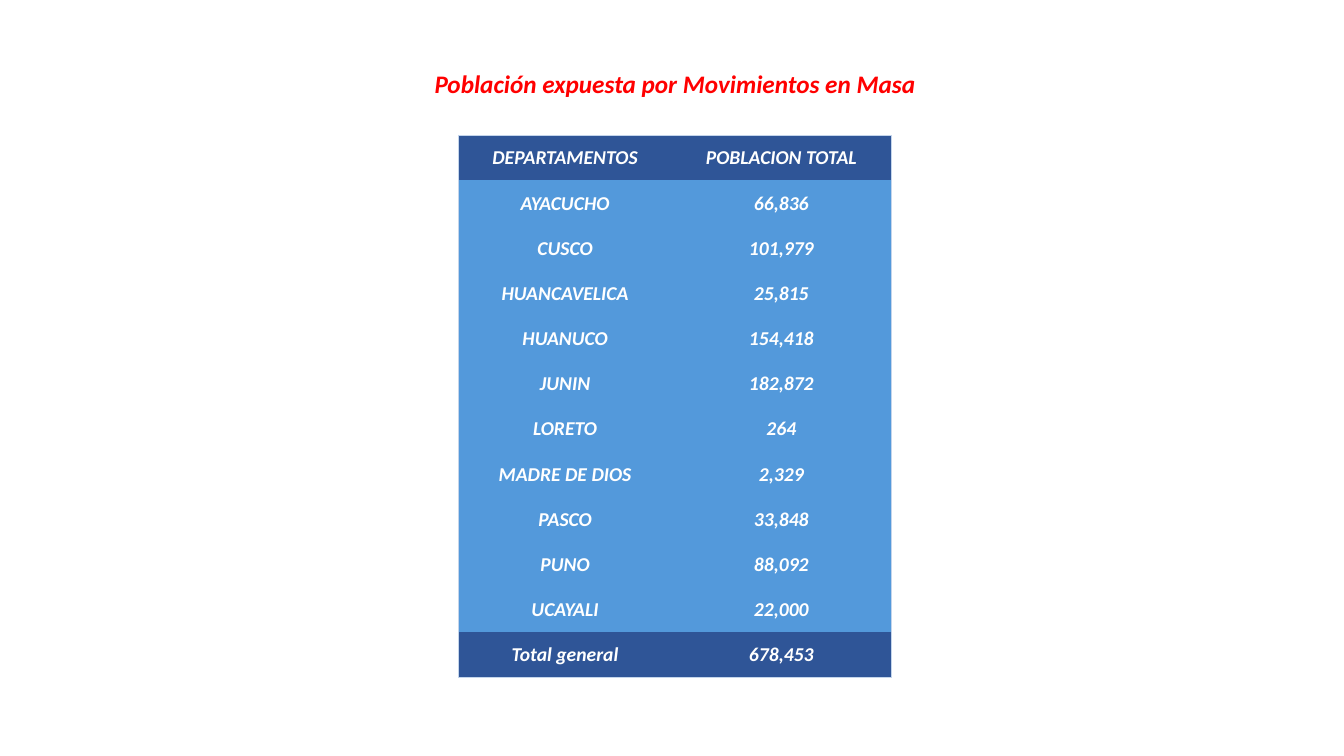
from dataclasses import dataclass

from lxml.etree import SubElement
from pptx import Presentation
from pptx.dml.color import RGBColor as Color
from pptx.enum.text import MSO_ANCHOR as Anchor, MSO_AUTO_SIZE as AutoSize, PP_ALIGN as Align
from pptx.oxml.ns import qn
from pptx.util import Emu, Pt

PX = 9144  # one px is a hundredth of an inch


@dataclass(frozen=True)
class Theme:
    font: str = "Calibri"
    title_size: int = 18
    table_size: int = 14
    title: str = "FF0000"
    table_text: str = "FFFFFF"
    band: str = "2F5597"
    body: str = "5399DB"
    border: str = "C4D5EB"
    border_width: float = 0.5


POPULATION = [
    ("DEPARTAMENTOS", "POBLACION TOTAL"),
    ("AYACUCHO", "66,836"),
    ("CUSCO", "101,979"),
    ("HUANCAVELICA", "25,815"),
    ("HUANUCO", "154,418"),
    ("JUNIN", "182,872"),
    ("LORETO", "264"),
    ("MADRE DE DIOS", "2,329"),
    ("PASCO", "33,848"),
    ("PUNO", "88,092"),
    ("UCAYALI", "22,000"),
    ("Total general", "678,453"),
]


def px(length):
    return Emu(length * PX)


class PageBuilder:
    def __init__(self, page, theme):
        self.page = page
        self.theme = theme

    def format_text(self, frame, size, color):
        para = frame.paragraphs[0]
        para.alignment = Align.CENTER
        font = para.font
        font.name, font.size = self.theme.font, Pt(size)
        font.bold = font.italic = True
        font.color.rgb = Color.from_string(color)

    def title(self, text, left, top, width, height):
        box = self.page.shapes.title
        box.left, box.top, box.width, box.height = map(px, (left, top, width, height))
        frame = box.text_frame
        frame.text = text
        frame.word_wrap = False
        frame.auto_size = AutoSize.SHAPE_TO_FIT_TEXT
        frame.vertical_anchor = Anchor.TOP
        self.format_text(frame, self.theme.title_size, self.theme.title)

    def borders(self, cell, visible):
        properties = cell._tc.get_or_add_tcPr()
        for side in "LRTB":
            line = SubElement(properties, qn(f"a:ln{side}"))
            if side in visible:
                line.set("w", str(Pt(self.theme.border_width)))
                fill = SubElement(line, qn("a:solidFill"))
                SubElement(fill, qn("a:srgbClr")).set("val", self.theme.border)
            else:
                SubElement(line, qn("a:noFill"))

    def table(self, rows, left, top, widths, height):
        last_row, last_column = len(rows) - 1, len(widths) - 1
        table = self.page.shapes.add_table(
            len(rows), len(widths), px(left), px(top), px(sum(widths)), px(height)).table
        table.horz_banding = False
        for column, width in zip(table.columns, widths):
            column.width = px(width)
        for r, values in enumerate(rows):
            table.rows[r].height = Emu(px(height) // len(rows))
            for c, value in enumerate(values):
                cell = table.cell(r, c)
                cell.text = value
                cell.vertical_anchor = Anchor.MIDDLE
                cell.margin_left = cell.margin_right = cell.margin_top = px(1)
                cell.margin_bottom = 0
                self.format_text(cell.text_frame, self.theme.table_size, self.theme.table_text)
                # Only the outer edge of the table is ruled
                edges = {"L": c == 0, "R": c == last_column, "T": r == 0, "B": r == last_row}
                self.borders(cell, [side for side, outer in edges.items() if outer])
                cell.fill.solid()
                color = self.theme.band if r in (0, last_row) else self.theme.body
                cell.fill.fore_color.rgb = Color.from_string(color)


def main():
    deck = Presentation()
    deck.slide_width, deck.slide_height = px(1333), px(750)
    page = deck.slides.add_slide(deck.slide_layouts[5])
    builder = PageBuilder(page, Theme())

    # Heading
    builder.title("Población expuesta por Movimientos en Masa", 418, 63, 503, 40)

    # Exposed population by department
    builder.table(POPULATION, 455, 134, (211, 218), 538)

    deck.save("out.pptx")


if __name__ == "__main__":
    main()
